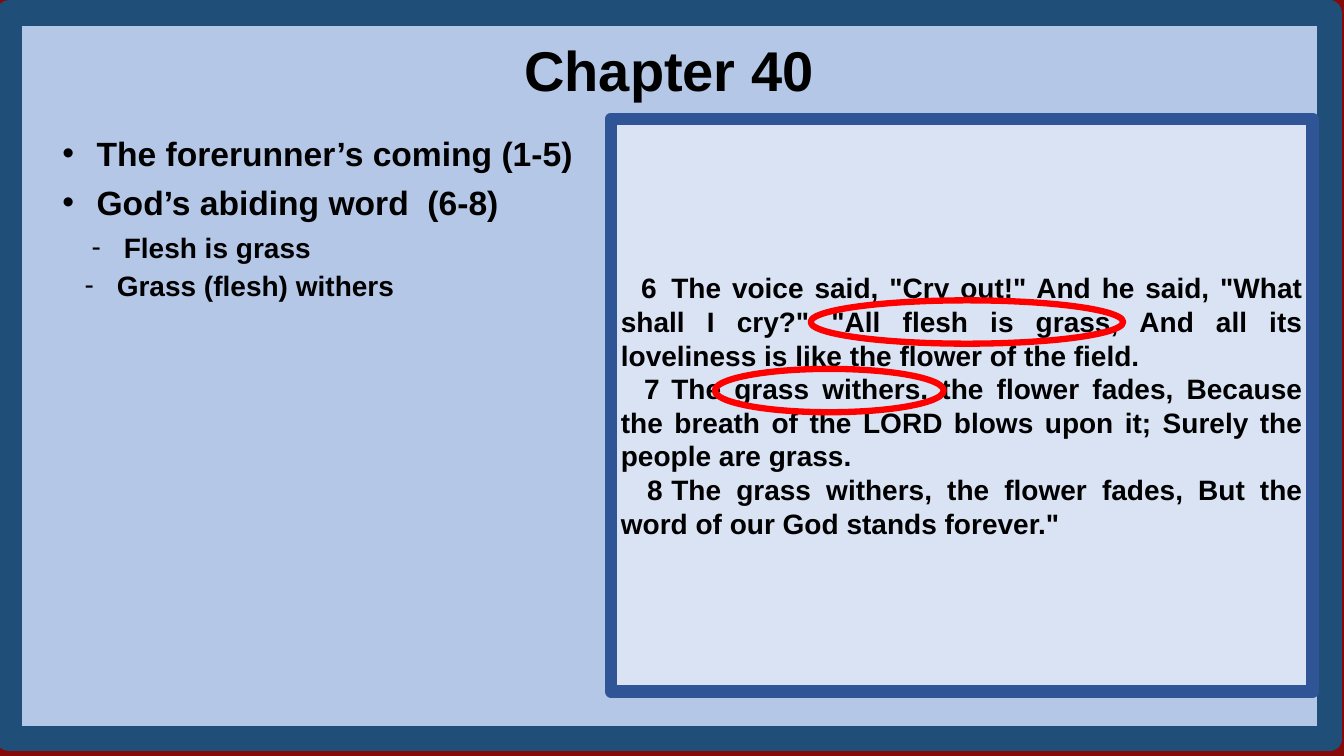
from dataclasses import dataclass
from typing import Optional

from lxml import etree
from pptx import Presentation
from pptx.dml.color import RGBColor
from pptx.enum.shapes import MSO_SHAPE
from pptx.enum.text import MSO_ANCHOR, PP_ALIGN
from pptx.oxml.ns import qn
from pptx.util import Inches, Pt

RECT = MSO_SHAPE.RECTANGLE
OVAL = MSO_SHAPE.OVAL
LEFT = PP_ALIGN.LEFT
CENTER = PP_ALIGN.CENTER
JUSTIFY = PP_ALIGN.JUSTIFY
TOP = MSO_ANCHOR.TOP
MIDDLE = MSO_ANCHOR.MIDDLE

FONT = "Arial"
COLORS = {
    "back": "860A0A",
    "panel": "B4C7E7",
    "frame": "1F4E79",
    "verse": "DAE3F3",
    "edge": "2F5597",
    "ring": "FF0000",
    "text": "000000",
}


@dataclass
class Block:
    x: float
    y: float
    w: float
    h: float
    line: str
    width: float
    fill: Optional[str] = None
    kind: MSO_SHAPE = RECT
    round: bool = False


@dataclass
class Point:
    text: str
    mark: str
    size: float
    left: float
    hang: float
    after: float


PANEL = Block(0.09, 0.13, 13.1, 7.2, "frame", 18, "panel")
VERSE = Block(6.06, 1.18, 6.96, 5.68, "edge", 9, "verse", round=True)
RINGS = [
    Block(8.04, 2.98, 3.1, 0.43, "ring", 4.5, kind=OVAL),
    Block(7.09, 3.66, 2.27, 0.43, "ring", 4.5, kind=OVAL),
]
POINTS = [
    Point("The forerunner’s coming (1-5)", "•", 24, 0.34, 0.34, 6),
    Point("God’s abiding word  (6-8)", "•", 24, 0.34, 0.34, 6),
    Point("Flesh is grass", "-", 20, 0.61, 0.32, 3),
    Point("Grass (flesh) withers", "-", 20, 0.54, 0.32, 3),
]
VERSES = [
    '6\tThe voice said, "Cry out!" And he said, "What shall I cry?" '
    '"All flesh is grass, And all its loveliness is like the flower of the field.',
    "7\tThe grass withers, the flower fades, Because the breath of the LORD "
    "blows upon it; Surely the people are grass.",
    "8\tThe grass withers, the flower fades, But the word of our God "
    'stands forever."',
]


def color(name: str) -> RGBColor:
    return RGBColor.from_string(COLORS[name])


def add_block(slide, block: Block):
    shape = slide.shapes.add_shape(
        block.kind, Inches(block.x), Inches(block.y), Inches(block.w), Inches(block.h)
    )
    shape.shadow.inherit = False
    if block.fill:
        shape.fill.solid()
        shape.fill.fore_color.rgb = color(block.fill)
    else:
        shape.fill.background()
    shape.line.color.rgb = color(block.line)
    shape.line.width = Pt(block.width)
    if block.round:
        etree.SubElement(shape.line._get_or_add_ln(), qn("a:round"))
    return shape


def add_box(slide, x: float, y: float, w: float, h: float):
    box = slide.shapes.add_textbox(Inches(x), Inches(y), Inches(w), Inches(h))
    return box.text_frame


def set_frame(frame, anchor: MSO_ANCHOR = TOP) -> None:
    frame.word_wrap = True
    frame.vertical_anchor = anchor


def add_text(frame, text: str, *, size: float, align: PP_ALIGN = LEFT,
             after: float = 0, left: float = 0, first: float = 0,
             mark: str = "", tab: float = 0) -> None:
    fresh = len(frame.paragraphs) == 1 and not frame.paragraphs[0].runs
    para = frame.paragraphs[0] if fresh else frame.add_paragraph()
    props = para._p.get_or_add_pPr()
    props.set("marL", str(Inches(left)))
    props.set("indent", str(Inches(first)))
    if mark:
        etree.SubElement(props, qn("a:buFont"), typeface=FONT)
        etree.SubElement(props, qn("a:buChar"), char=mark)
    if tab:
        tabs = etree.SubElement(props, qn("a:tabLst"))
        etree.SubElement(tabs, qn("a:tab"), pos=str(Inches(tab)), algn="l")
    para.alignment = align
    para.space_after = Pt(after)
    run = para.add_run()
    run.text = text
    run.font.name = FONT
    run.font.size = Pt(size)
    run.font.bold = True
    run.font.color.rgb = color("text")


def main() -> None:
    deck = Presentation()
    deck.slide_width = Inches(13.33)
    deck.slide_height = Inches(7.5)
    slide = deck.slides.add_slide(deck.slide_layouts[6])
    slide.background.fill.solid()
    slide.background.fill.fore_color.rgb = color("back")

    add_block(slide, PANEL)
    verse = add_block(slide, VERSE).text_frame
    set_frame(verse, MIDDLE)
    for i, text in enumerate(VERSES):
        shift = 0.03 * i
        add_text(verse, text, size=20, align=JUSTIFY, first=0.2 + shift, tab=0.55 + shift)

    points = add_box(slide, 0.52, 1.27, 5.54, 1.79)
    set_frame(points)
    for item in POINTS:
        add_text(points, item.text, size=item.size, after=item.after,
                 left=item.left, first=-item.hang, mark=item.mark)

    title = add_box(slide, 0.26, 0.3, 12.75, 0.77)
    set_frame(title)
    add_text(title, "Chapter 40", size=40, align=CENTER, after=5)

    for ring in RINGS:
        add_block(slide, ring)
    deck.save("out.pptx")


if __name__ == "__main__":
    main()
